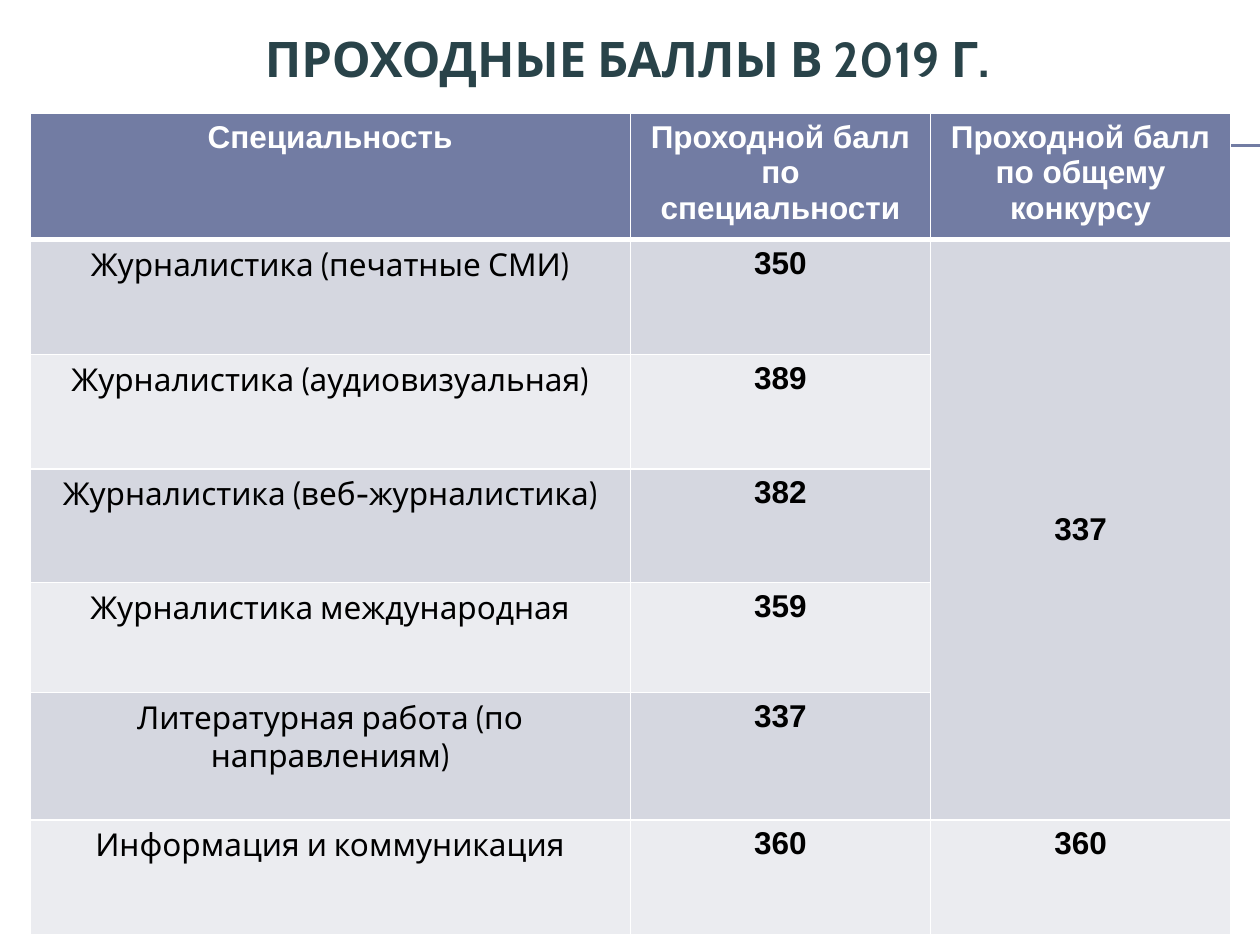
from lxml.etree import SubElement
from pptx import Presentation
from pptx.dml.color import RGBColor
from pptx.enum.shapes import MSO_CONNECTOR
from pptx.enum.text import MSO_ANCHOR, PP_ALIGN
from pptx.oxml.ns import qn
from pptx.util import Pt

WHITE, BLACK, TITLE_COLOR = "FFFFFF", "000000", "294349"
ACCENT, BAND_DARK, BAND_LIGHT = "727CA3", "D5D7E0", "EBECF0"

HEADERS = ["Специальность", "Проходной балл по специальности",
           "Проходной балл по общему конкурсу"]
SPECIALTIES = [
    ("Журналистика (печатные СМИ)", "350", "337"),
    ("Журналистика (аудиовизуальная)", "389", ""),
    ("Журналистика (веб-журналистика)", "382", ""),
    ("Журналистика международная", "359", ""),
    ("Литературная работа (по направлениям)", "337", ""),
    ("Информация и коммуникация", "360", "360"),
]
COLUMN_WIDTHS = [343.2, 171.5, 171.5]
ROW_HEIGHTS = [66.6, 65.5, 65.5, 65, 62.6, 73, 65.5]
SHARED_SCORE_ROWS = (1, 5)


def rgb(hex_color):
    return RGBColor.from_string(hex_color)


def write(text_frame, text, size, font_name, color, bold):
    paragraph = text_frame.paragraphs[0]
    paragraph.text = text
    paragraph.alignment = PP_ALIGN.CENTER
    font = paragraph.font
    font.size, font.name, font.bold = Pt(size), font_name, bold
    font.color.rgb = rgb(color)


def add_rule(slide, y):
    rule = slide.shapes.add_connector(
        MSO_CONNECTOR.STRAIGHT, Pt(40.5), Pt(y), Pt(720), Pt(y))
    rule.line.color.rgb = rgb(ACCENT)
    rule.line.width = Pt(0.75)
    SubElement(rule._element.spPr, qn("a:effectLst"))


def add_title(slide, text):
    title = slide.shapes.add_textbox(Pt(16.5), Pt(0), Pt(684), Pt(66))
    title.text_frame.word_wrap = True
    title.text_frame.vertical_anchor = MSO_ANCHOR.MIDDLE
    write(title.text_frame, text, 28, "Cabin", TITLE_COLOR, True)


def set_borders(cell, top, bottom):
    """Draw white cell borders; top and bottom are widths in points."""
    properties = cell._tc.get_or_add_tcPr()
    widths = {"a:lnL": 1, "a:lnR": 1, "a:lnT": top, "a:lnB": bottom}
    for position, (tag, width) in enumerate(widths.items()):
        border = properties.makeelement(qn(tag), {"w": str(Pt(width))})
        fill = SubElement(border, qn("a:solidFill"))
        SubElement(fill, qn("a:srgbClr"), val=WHITE)
        properties.insert(position, border)


def add_score_table(slide):
    rows = [HEADERS, *SPECIALTIES]
    table = slide.shapes.add_table(
        len(rows), len(HEADERS), Pt(17), Pt(65),
        Pt(sum(COLUMN_WIDTHS)), Pt(sum(ROW_HEIGHTS))).table
    for column, width in zip(table.columns, COLUMN_WIDTHS):
        column.width = Pt(width)
    for row, height in zip(table.rows, ROW_HEIGHTS):
        row.height = Pt(height)

    for r, texts in enumerate(rows):
        is_header = r == 0
        band = ACCENT if is_header else BAND_DARK if r % 2 else BAND_LIGHT
        for c, text in enumerate(texts):
            cell = table.cell(r, c)
            is_name = c == 0 and not is_header
            cell.fill.solid()
            cell.fill.fore_color.rgb = rgb(band)
            set_borders(cell, 3 if r == 1 else 1, 3 if is_header else 1)
            write(cell.text_frame, text, 18, "Cabin" if is_name else "Arial",
                  WHITE if is_header else BLACK, not is_name)

    first, last = SHARED_SCORE_ROWS
    shared_score = table.cell(first, 2)
    shared_score.merge(table.cell(last, 2))
    shared_score.vertical_anchor = MSO_ANCHOR.MIDDLE


def main():
    presentation = Presentation()
    presentation.slide_width, presentation.slide_height = Pt(720), Pt(540)
    slide = presentation.slides.add_slide(presentation.slide_layouts[6])
    for y in (82.8, 83.5):
        add_rule(slide, y)
    add_title(slide, "ПРОХОДНЫЕ БАЛЛЫ В 2019 Г.")
    add_score_table(slide)
    presentation.save("out.pptx")


if __name__ == "__main__":
    main()
